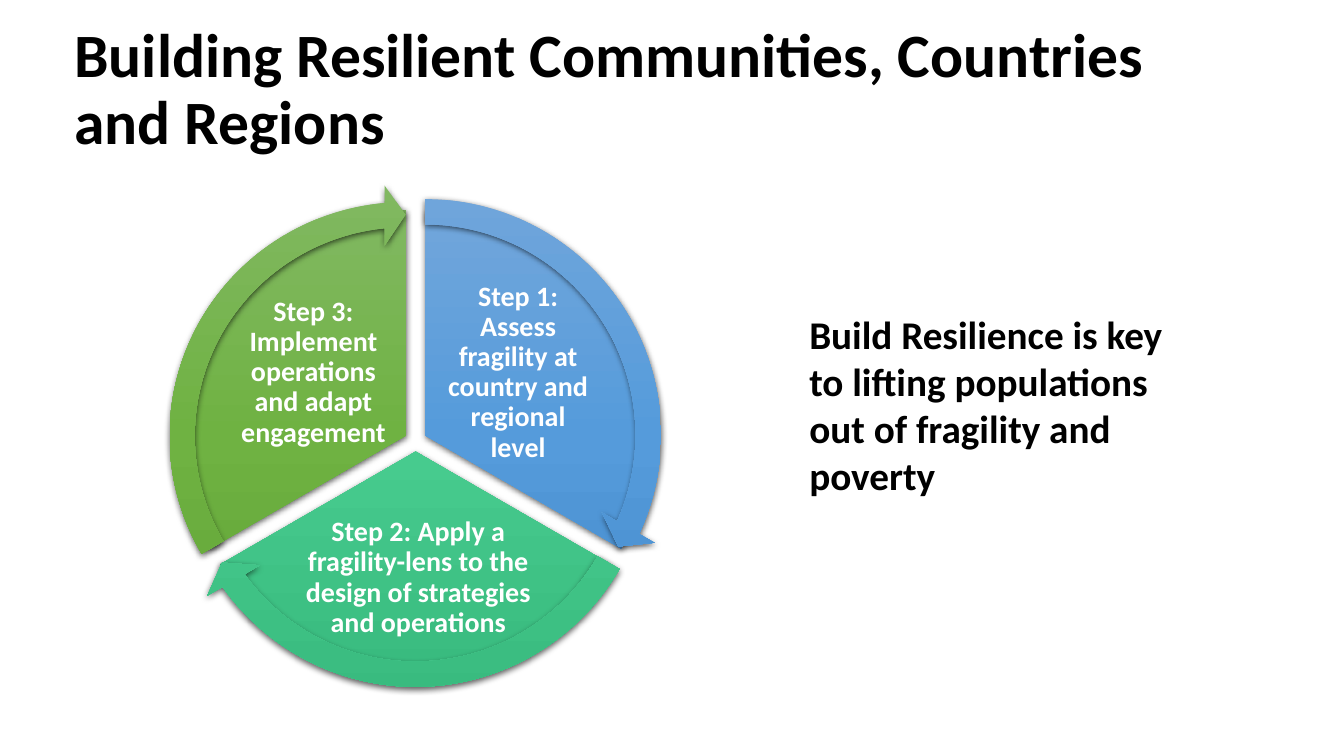
"""Build the slide on resilient communities, with its three-step cycle."""
from copy import deepcopy

from lxml.etree import SubElement
from pptx import Presentation
from pptx.dml.color import RGBColor
from pptx.enum.shapes import MSO_SHAPE
from pptx.enum.text import MSO_ANCHOR, MSO_AUTO_SIZE, PP_ALIGN
from pptx.oxml.ns import qn
from pptx.util import Pt


def write(box, text, size, color, frame_format, para_format):
    frame = box.text_frame
    para = frame.paragraphs[0]
    span = para.add_run()
    span.text = text
    span.font.color.rgb = RGBColor.from_string(color)
    font_format = {"name": "Calibri", "size": Pt(size), "bold": True}
    for target, values in ((frame, frame_format), (para, para_format), (span.font, font_format)):
        for name, value in values.items():
            setattr(target, name, value)


def draw(page, kind, place, angles, colors):
    shape = page.shapes.add_shape(kind, *[Pt(length) for length in place])
    for index, angle in enumerate(angles):
        shape.adjustments[index] = angle
    shape.fill.gradient()
    shape.fill.gradient_angle = 270
    stop_list = shape.element.spPr.find(".//" + qn("a:gsLst"))
    stop_list.append(deepcopy(stop_list[0]))
    for stop, position, color in zip(shape.fill.gradient_stops, (0, 0.5, 1), colors):
        stop.position = position
        stop.color.rgb = RGBColor.from_string(color)
    shape.line.fill.background()
    shape.shadow.inherit = False
    effects = shape.element.spPr.find(qn("a:effectLst"))
    shadow = SubElement(effects, qn("a:outerShdw"), blurRad=str(Pt(4.5)), dist=str(Pt(1.5)),
                        dir="5400000", algn="ctr", rotWithShape="0")
    black = SubElement(shadow, qn("a:srgbClr"), val="000000")
    SubElement(black, qn("a:alpha"), val="63000")


deck = Presentation()
deck.slide_width, deck.slide_height = Pt(960), Pt(540)
page = deck.slides.add_slide(deck.slide_layouts[5])

title = page.shapes.title
title_place = {"left": Pt(46), "top": Pt(13), "width": Pt(828), "height": Pt(104.4)}
for name, value in title_place.items():
    setattr(title, name, value)
write(title, "Building Resilient Communities, Countries and Regions", 44, "000000",
      {"vertical_anchor": MSO_ANCHOR.MIDDLE, "auto_size": MSO_AUTO_SIZE.NONE, "word_wrap": True},
      {"alignment": PP_ALIGN.LEFT, "line_spacing": 0.9})

message = page.shapes.add_textbox(Pt(571), Pt(218.2), Pt(290.2), Pt(143.3))
write(message, "Build Resilience is key to lifting populations out of fragility and poverty",
      28, "000000", {"word_wrap": True, "auto_size": MSO_AUTO_SIZE.SHAPE_TO_FIT_TEXT}, {})

steps = [
    {"text": "Step 1: Assess fragility at country and regional level",
     "label": (312.5, 218.2, 115.2, 95.8), "corner": (142.6, 149.8), "pie": (162, 18),
     "arrow": (14.72, 161.99), "arrow_top": 129.6, "arrow_height": 362.2,
     "colors": ("71A6DB", "559BDB", "448ACA")},
    {"text": "Step 2: Apply a fragility-lens to the design of strategies and operations",
     "label": (212.4, 370.8, 172.8, 84.2), "corner": (135.6, 161.3), "pie": (18, 90),
     "arrow": (86.72, 18), "arrow_top": 141.1, "arrow_height": 362.2,
     "colors": ("67CC9A", "47CB8E", "39BB7F")},
    {"text": "Step 3: Implement operations and adapt engagement",
     "label": (166.3, 218.2, 115.2, 95.8), "corner": (128.6, 149.8), "pie": (90, 162),
     "arrow": (158.73, 90), "arrow_top": 131.8, "arrow_height": 359.3,
     "colors": ("81B861", "6FB242", "62A336")},
]
label_format = {"word_wrap": True, "vertical_anchor": MSO_ANCHOR.MIDDLE}
for side in ("left", "right", "top", "bottom"):
    label_format["margin_" + side] = Pt(2)

for step in steps:
    draw(page, MSO_SHAPE.PIE, (*step["corner"], 322.6, 322.6), step["pie"], step["colors"])
    label = page.shapes.add_textbox(*[Pt(length) for length in step["label"]])
    write(label, step["text"], 20, "FFFFFF", label_format,
          {"alignment": PP_ALIGN.CENTER, "line_spacing": 0.9})

for step in steps:
    place = (step["corner"][0] - 20, step["arrow_top"], 362.2, step["arrow_height"])
    draw(page, MSO_SHAPE.CIRCULAR_ARROW, place, (0.05, 3.28, *step["arrow"], 0.06), step["colors"])

deck.save("out.pptx")
